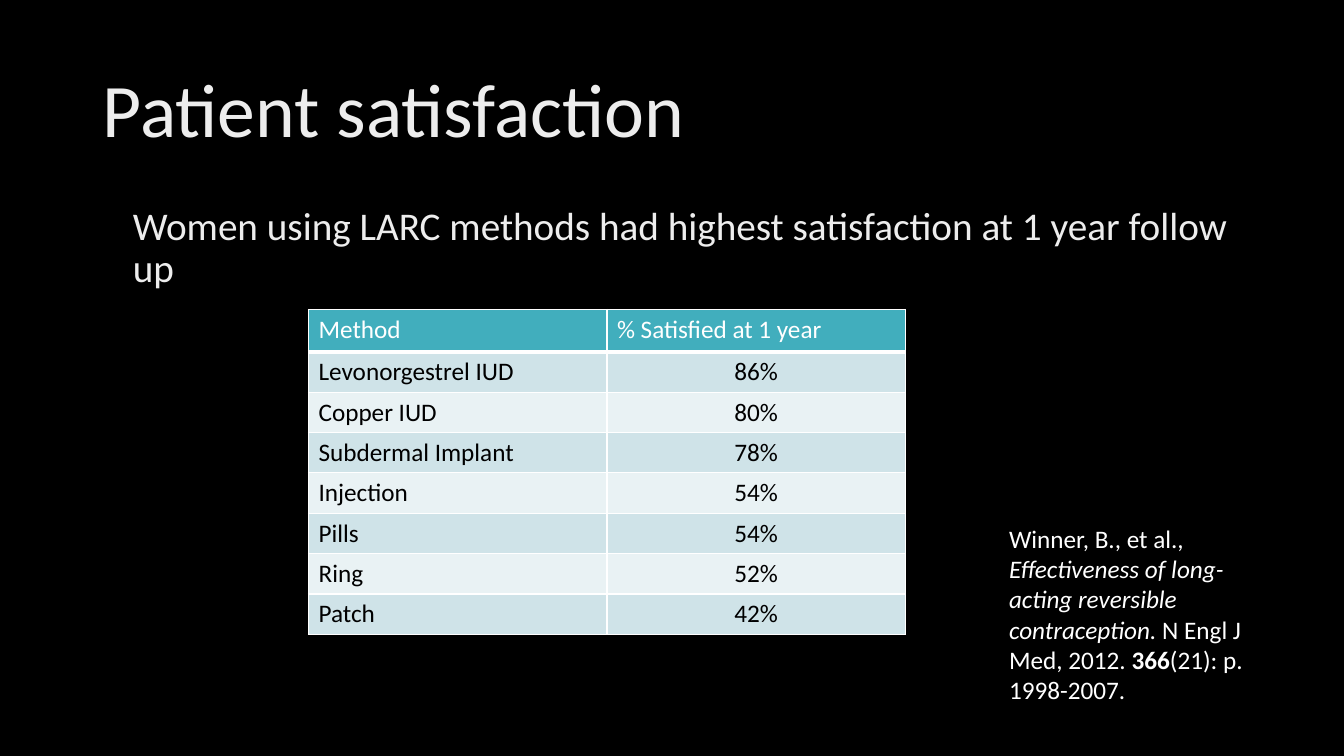
from lxml import etree
from pptx import Presentation
from pptx.dml.color import RGBColor
from pptx.enum.text import MSO_ANCHOR, PP_ALIGN
from pptx.oxml.ns import qn
from pptx.util import Inches, Pt

LEFT, CENTER = PP_ALIGN.LEFT, PP_ALIGN.CENTER
TOP, MIDDLE = MSO_ANCHOR.TOP, MSO_ANCHOR.MIDDLE
BLACK = RGBColor(0x00, 0x00, 0x00)
WHITE = RGBColor(0xFF, 0xFF, 0xFF)
SILVER = RGBColor(0xED, 0xED, 0xED)
TEAL = RGBColor(0x41, 0xAE, 0xBD)
BAND_DARK = RGBColor(0xCF, 0xE3, 0xE8)
BAND_LIGHT = RGBColor(0xE9, 0xF2, 0xF4)

SATISFACTION = [
    ("Method", "% Satisfied at 1 year"),
    ("Levonorgestrel IUD", "86%"),
    ("Copper IUD", "80%"),
    ("Subdermal Implant", "78%"),
    ("Injection", "54%"),
    ("Pills", "54%"),
    ("Ring", "52%"),
    ("Patch", "42%"),
]


def add_run(paragraph, text, size=18, color=WHITE, bold=False, italic=False):
    """Append a formatted run to a paragraph."""
    run = paragraph.add_run()
    run.text = text
    run.font.name = "Calibri"
    run.font.size = Pt(size)
    run.font.color.rgb = color
    run.font.bold = bold
    run.font.italic = italic


def add_text(slide, left, top, width, height, anchor=TOP, spacing=1.0):
    """Add a wrapping text box and return its first paragraph."""
    box = slide.shapes.add_textbox(
        Inches(left), Inches(top), Inches(width), Inches(height))
    box.text_frame.word_wrap = True
    box.text_frame.vertical_anchor = anchor
    paragraph = box.text_frame.paragraphs[0]
    paragraph.line_spacing = spacing
    return paragraph


def set_borders(cell, bottom_width):
    """Draw white borders around a table cell."""
    properties = cell._tc.get_or_add_tcPr()
    widths = {"a:lnL": 1, "a:lnR": 1, "a:lnT": 1, "a:lnB": bottom_width}
    for position, (side, width) in enumerate(widths.items()):
        line = etree.Element(qn(side), w=str(Pt(width)))
        fill = etree.SubElement(line, qn("a:solidFill"))
        etree.SubElement(fill, qn("a:srgbClr"), val=str(WHITE))
        properties.insert(position, line)


def add_satisfaction_table(slide):
    """Add the banded table of methods and satisfaction rates."""
    table = slide.shapes.add_table(
        len(SATISFACTION), 2, Inches(3.06), Inches(3.07),
        Inches(5.92), Inches(3.22)).table
    for row_index, values in enumerate(SATISFACTION):
        header = row_index == 0
        table.rows[row_index].height = Inches(0.42 if header else 0.4)
        band = BAND_DARK if row_index % 2 else BAND_LIGHT
        for column_index, value in enumerate(values):
            cell = table.cell(row_index, column_index)
            cell.fill.solid()
            cell.fill.fore_color.rgb = TEAL if header else band
            set_borders(cell, 3 if header else 1)
            paragraph = cell.text_frame.paragraphs[0]
            paragraph.alignment = CENTER if column_index and not header else LEFT
            add_run(paragraph, value, color=WHITE if header else BLACK)


def add_citation(slide):
    """Add the journal reference beside the table."""
    citation = add_text(slide, 9.91, 5.14, 2.7, 1.92)
    add_run(citation, "Winner, B., et al., ")
    add_run(citation, "Effectiveness of long-acting reversible contraception.",
            italic=True)
    add_run(citation, " N Engl J Med, 2012. ")
    add_run(citation, "366", bold=True)
    add_run(citation, "(21): p. 1998-2007.")


def main():
    """Build the patient satisfaction slide."""
    presentation = Presentation()
    presentation.slide_width = Inches(13.33)
    presentation.slide_height = Inches(7.5)
    slide = presentation.slides.add_slide(presentation.slide_layouts[6])
    slide.background.fill.solid()
    slide.background.fill.fore_color.rgb = BLACK
    title = add_text(slide, 0.92, 0.4, 11.5, 1.45, anchor=MIDDLE, spacing=0.9)
    add_run(title, "Patient satisfaction", size=54, color=SILVER)
    finding = add_text(slide, 1.22, 2, 11.19, 4.76, spacing=0.9)
    add_run(finding, "Women using LARC methods had highest satisfaction "
            "at 1 year follow up", size=28, color=SILVER)
    add_satisfaction_table(slide)
    add_citation(slide)
    presentation.save("out.pptx")


if __name__ == "__main__":
    main()
